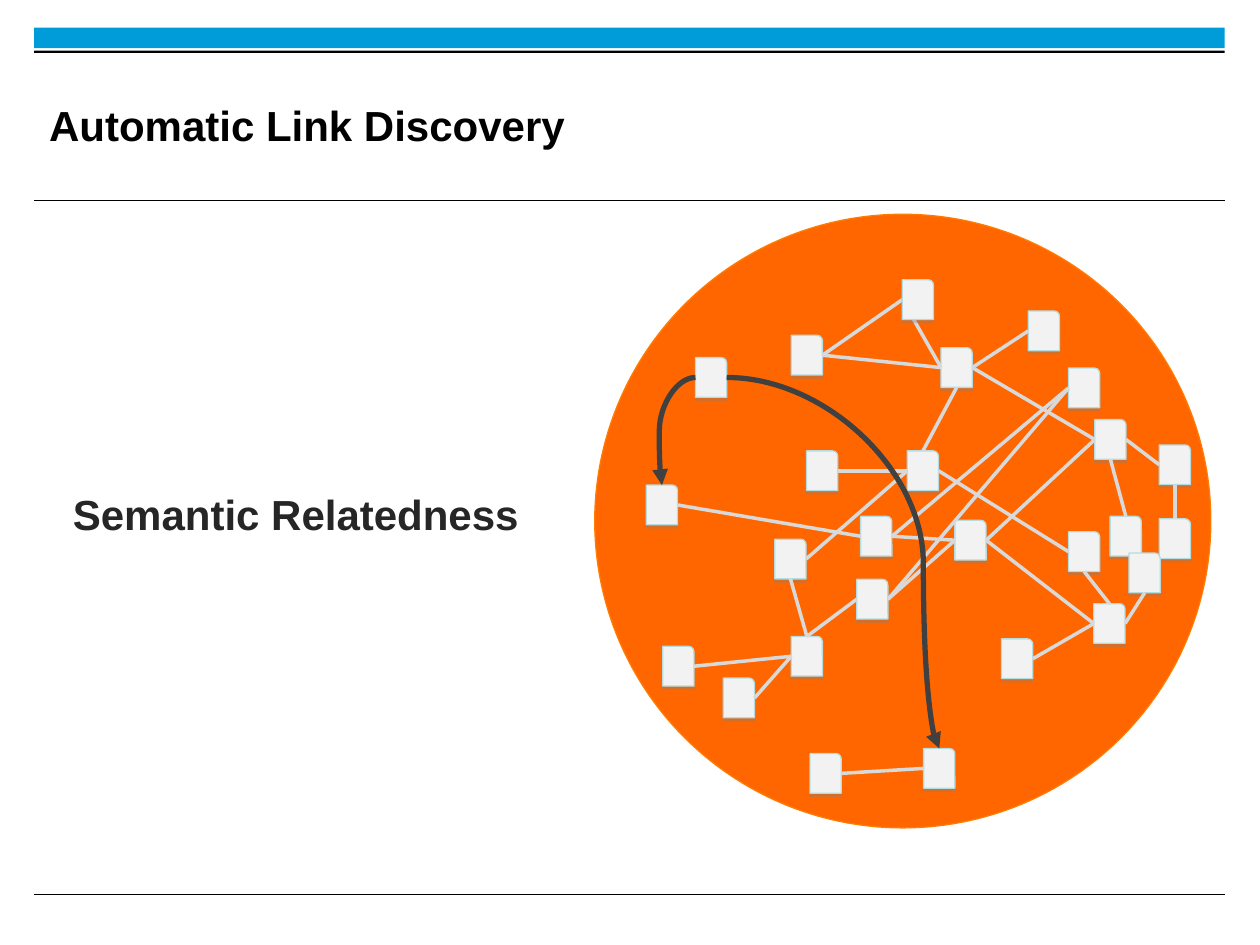
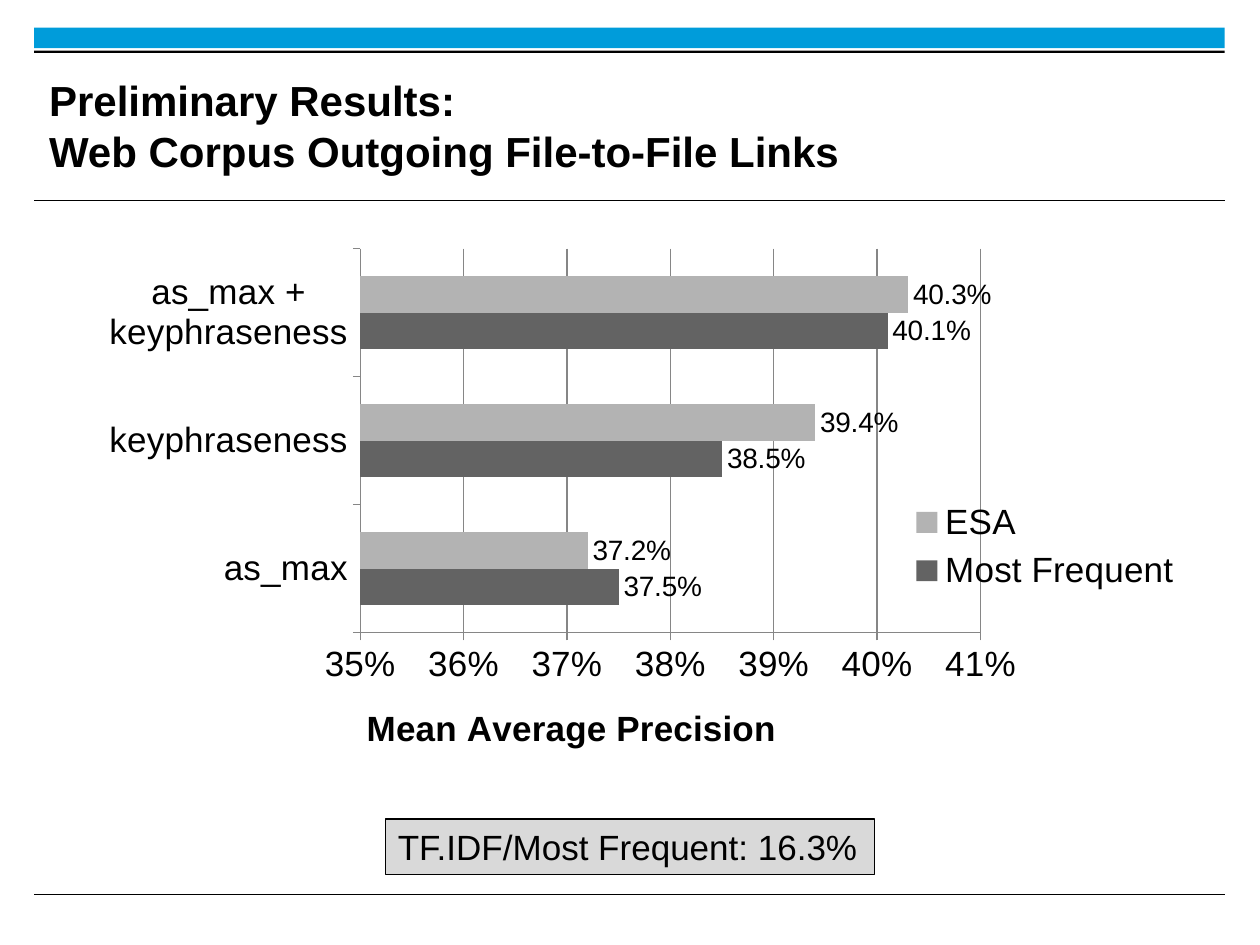
"""Build two slides on automatic link discovery and its first results."""
import pptx
import pptx.chart.data
import pptx.dml.color
import pptx.enum.chart
import pptx.enum.shapes
import pptx.enum.text
import pptx.oxml.ns
import pptx.util
from lxml import etree

Cm = pptx.util.Cm
Pt = pptx.util.Pt
qn = pptx.oxml.ns.qn
RGBColor = pptx.dml.color.RGBColor
Shape = pptx.enum.shapes.MSO_SHAPE
Line = pptx.enum.shapes.MSO_CONNECTOR

FONT = "Arial"
BLACK = RGBColor(0x00, 0x00, 0x00)
BLUE = RGBColor(0x00, 0x9C, 0xDA)
ORANGE = RGBColor(0xFF, 0x66, 0x00)
AMBER = RGBColor(0xFF, 0x7C, 0x00)
PAPER = RGBColor(0xF2, 0xF2, 0xF2)
EDGE = RGBColor(0xB6, 0xDC, 0xDF)
SILVER = RGBColor(0xD9, 0xD9, 0xD9)
DARK = RGBColor(0x40, 0x40, 0x40)
INK = RGBColor(0x26, 0x26, 0x26)
GRID = RGBColor(0x86, 0x86, 0x86)
LIGHT_BAR = RGBColor(0xB3, 0xB3, 0xB3)
DARK_BAR = RGBColor(0x63, 0x63, 0x63)

DOC_W, DOC_H = 0.63, 0.8
DOCS = {
    "A": (18.29, 9.09), "B": (17.27, 11.68), "C": (15.62, 10.87),
    "D": (19.25, 10.49), "E": (16.26, 9.09), "F": (17.35, 10.41),
    "G": (20.19, 12.88), "H": (23.37, 8.97), "I": (15.95, 6.76),
    "J": (21.54, 7.42), "K": (16.33, 15.19), "L": (20.73, 6.27),
    "M": (22.07, 8.46), "N": (21.54, 10.72), "O": (18.97, 7.01),
    "P": (18.62, 15.09), "Q": (22.38, 10.41), "R": (23.37, 10.46),
    "S": (14.02, 7.21), "T": (22.05, 12.17), "U": (22.76, 11.15),
    "V": (15.95, 12.83), "W": (13.03, 9.78), "X": (14.58, 13.67),
    "Y": (13.36, 13.03), "Z": (18.19, 5.64),
}
LINKS = (
    "E3-A1 C3-A1 B3-D1 T0-N2 F3-D1 D3-T1 O3-L1 I3-O1 O2-A0 "
    "U2-T3 M3-H1 Q0-M2 R0-H2 K3-P1 X3-V1 Y3-V1 V0-C2 V0-B1 "
    "W3-F1 F3-J1 J1-B3 G3-T1 Z1-I3 M1-O3 A3-N1 Z1-O1 D3-M1"
).split()


def add_block(slide, kind, box, fill, edge=None):
    """Add a filled preset shape, outlined if an edge colour is given."""
    block = slide.shapes.add_shape(kind, *map(Cm, box))
    block.shadow.inherit = False
    block.fill.solid()
    block.fill.fore_color.rgb = fill
    if edge is None:
        block.line.fill.background()
    else:
        block.line.color.rgb = edge
        block.line.width = Pt(0.75)
    return block


def add_line(slide, kind, ends, color, width):
    """Add a connector without shadow."""
    line = slide.shapes.add_connector(kind, *map(Cm, ends))
    line.line.color.rgb = color
    line.line.width = Pt(width)
    etree.SubElement(line.element.spPr, qn("a:effectLst"))
    return line


def add_arrow(slide, ends, bend):
    """Add a curved arrow that turns at the given share of its width."""
    arrow = add_line(slide, Line.CURVE, ends, DARK, 3)
    props = arrow.element.spPr
    guides = props.find(qn("a:prstGeom")).find(qn("a:avLst"))
    etree.SubElement(guides, qn("a:gd"), name="adj1", fmla=f"val {round(bend * 100000)}")
    etree.SubElement(props.find(qn("a:ln")), qn("a:tailEnd"), type="triangle")


def add_doc(slide, spot):
    """Add a page with one round corner and a thin shadow below."""
    doc = add_block(slide, Shape.ROUND_1_RECTANGLE, (*spot, DOC_W, DOC_H), PAPER, EDGE)
    shade = etree.SubElement(
        doc.element.spPr.find(qn("a:effectLst")), qn("a:outerShdw"),
        blurRad="0", dist=str(Pt(1.8)), dir="5400000", rotWithShape="0")
    tint = etree.SubElement(shade, qn("a:srgbClr"), val="808080")
    etree.SubElement(tint, qn("a:alpha"), val="35000")
    return doc


def set_font(font, size, color=BLACK, bold=False):
    """Set face, size, colour and weight of a font."""
    font.name = FONT
    font.size = Pt(size)
    font.color.rgb = color
    font.bold = bold


def add_label(slide, text, box, size, color, bold=False):
    """Add a one-line text box."""
    label = slide.shapes.add_textbox(*map(Cm, box))
    label.text_frame.word_wrap = False
    label.text_frame.text = text
    set_font(label.text_frame.paragraphs[0].font, size, color, bold)
    return label


def set_layout(layout, slide):
    """Give the layout its band, rules and title box, drawn by way of a slide."""
    for holder in list(layout.placeholders):
        if holder.placeholder_format.idx != 0:
            layout.shapes.element.remove(holder.element)
            continue
        holder.left, holder.top, holder.width, holder.height = map(Cm, (0.99, 1.35, 19.1, 2.34))
        frame = holder.text_frame
        frame.margin_left = frame.margin_right = frame.margin_top = frame.margin_bottom = 0
        frame.vertical_anchor = pptx.enum.text.MSO_ANCHOR.MIDDLE
        frame.auto_size = pptx.enum.text.MSO_AUTO_SIZE.NONE
    parts = [
        add_block(slide, Shape.RECTANGLE, (0.69, 0.56, 24, 0.41), BLUE),
        add_block(slide, Shape.RECTANGLE, (0.69, 1.02, 24, 0.05), BLACK),
    ]
    for y in (4.04, 18.03):
        parts.append(add_line(slide, Line.STRAIGHT, (0.69, y, 24.69, y), BLACK, 0.6))
    for part in parts:
        layout.shapes.element.append(part.element)


def set_title(slide, text):
    """Fill and format the title."""
    frame = slide.shapes.title.text_frame
    frame.text = text
    para = frame.paragraphs[0]
    para.alignment = pptx.enum.text.PP_ALIGN.LEFT
    set_font(para.font, 24, bold=True)


def add_web(slide):
    """Draw the linked pages inside the disc, with two arrows for new links."""
    add_block(slide, Shape.OVAL, (11.99, 4.32, 12.42, 12.37), ORANGE, AMBER)
    docs = {name: add_doc(slide, spot) for name, spot in DOCS.items()}
    for link in LINKS:
        line = add_line(slide, Line.STRAIGHT, (0, 0, 0, 0), SILVER, 2)
        start, end = link.split("-")
        line.begin_connect(docs[start[0]], int(start[1]))
        line.end_connect(docs[end[0]], int(end[1]))
    left, top = DOCS["S"]
    mid = top + DOC_H / 2
    for x, goal, bend in ((left + DOC_W, "P", 0.925), (left, "W", 1.081)):
        tip_x, tip_y = DOCS[goal]
        add_arrow(slide, (x, mid, tip_x + DOC_W / 2, tip_y), bend)
    slide.shapes.element.append(docs["Z"].element)


def place(node, inner=False, **spots):
    """Give a chart part a fixed place, as shares of the chart."""
    for old in node.findall(qn("c:layout")):
        node.remove(old)
    layout = etree.Element(qn("c:layout"))
    manual = etree.SubElement(layout, qn("c:manualLayout"))
    if inner:
        etree.SubElement(manual, qn("c:layoutTarget"), val="inner")
    for side in ("x", "y"):
        etree.SubElement(manual, qn(f"c:{side}Mode"), val="edge")
    for side, share in spots.items():
        etree.SubElement(manual, qn(f"c:{side}"), val=str(share))
    after = node.find(qn("c:overlay"))
    node.insert(0 if after is None else node.index(after), layout)


def set_axis(axis):
    """Format the line, ticks and labels of an axis."""
    axis.major_tick_mark = pptx.enum.chart.XL_TICK_MARK.OUTSIDE
    axis.format.line.color.rgb = GRID
    set_font(axis.tick_labels.font, 20)


def add_bars(slide):
    """Add the bar chart of precision by method."""
    data = pptx.chart.data.CategoryChartData(number_format="0.0%")
    data.categories = ["as_max", "keyphraseness", "as_max + keyphraseness"]
    data.add_series("Most Frequent", (0.375, 0.385, 0.401))
    data.add_series("ESA", (0.372, 0.394, 0.403))
    chart = slide.shapes.add_chart(
        pptx.enum.chart.XL_CHART_TYPE.BAR_CLUSTERED,
        *map(Cm, (0.89, 4.45, 23.6, 11.23)), data).chart
    set_font(chart.font, 10)
    chart.has_title = False
    plot = chart.plots[0]
    plot.vary_by_categories = False
    plot.gap_width = 150
    plot.overlap = 0
    for series, color in zip(plot.series, (DARK_BAR, LIGHT_BAR)):
        series.format.fill.solid()
        series.format.fill.fore_color.rgb = color
        labels = series.data_labels
        labels.show_value = True
        labels.number_format = "0.0%"
        labels.number_format_is_linked = False
        labels.position = pptx.enum.chart.XL_LABEL_POSITION.OUTSIDE_END
        set_font(labels.font, 16)
    set_axis(chart.category_axis)
    scale = chart.value_axis
    set_axis(scale)
    scale.minimum_scale, scale.maximum_scale, scale.major_unit = 0.35, 0.41, 0.01
    scale.tick_labels.number_format = "0%"
    scale.tick_labels.number_format_is_linked = False
    scale.has_major_gridlines = True
    scale.major_gridlines.format.line.color.rgb = GRID
    title = scale.axis_title
    title.text_frame.text = "Mean Average Precision"
    set_font(title.text_frame.paragraphs[0].font, 20, bold=True)
    chart.has_legend = True
    legend = chart.legend
    legend.position = pptx.enum.chart.XL_LEGEND_POSITION.RIGHT
    legend.include_in_layout = False
    set_font(legend.font, 20)
    place(chart.element.find(".//" + qn("c:plotArea")), True, x=0.27, y=0.05, w=0.53, h=0.69)
    place(chart.element.find(".//" + qn("c:legend")), x=0.73, y=0.49, w=0.25, h=0.19)
    place(chart.element.find(".//" + qn("c:valAx")).find(qn("c:title")), x=0.27, y=0.86)


def main():
    """Build and save the slides."""
    deck = pptx.Presentation()
    deck.slide_width, deck.slide_height = Cm(25.4), Cm(19.05)
    layout = deck.slide_layouts[5]
    web = deck.slides.add_slide(layout)
    set_layout(layout, web)
    set_title(web, "Automatic Link Discovery")
    add_web(web)
    add_label(web, "Semantic Relatedness", (1.22, 9.73, 9.58, 1.3), 24, INK, True)

    results = deck.slides.add_slide(layout)
    set_title(results, "Preliminary Results:\vWeb Corpus Outgoing File-to-File Links")
    add_bars(results)
    note = add_label(results, "TF.IDF/Most Frequent: 16.3%", (7.77, 16.51, 9.86, 1.12), 20, BLACK)
    note.fill.solid()
    note.fill.fore_color.rgb = SILVER
    note.line.color.rgb = BLACK
    note.line.width = Pt(0.75)
    deck.save("out.pptx")


if __name__ == "__main__":
    main()
